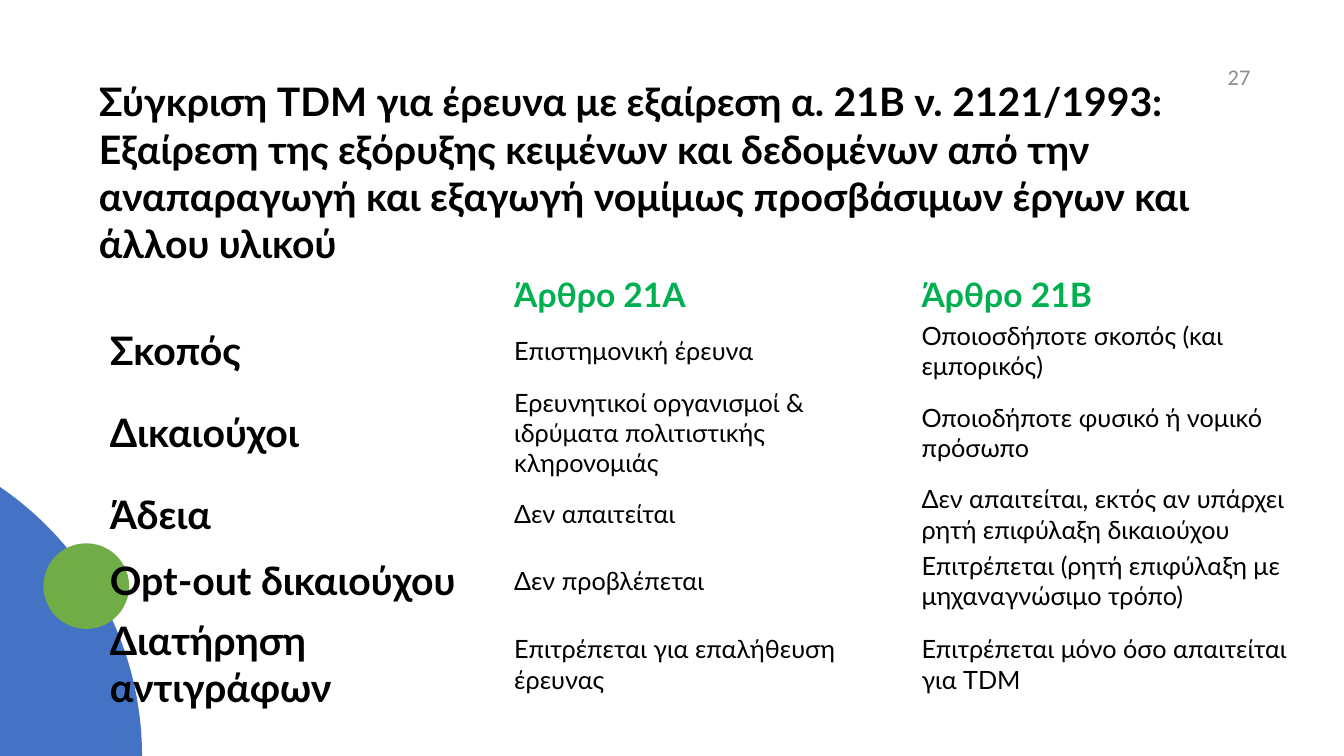
import math
from dataclasses import dataclass

from pptx import Presentation
from pptx import util as u
from pptx.dml.color import RGBColor
from pptx.enum import shapes, text

WIDTH, HEIGHT = u.Inches(13.33), u.Inches(7.5)
BLACK, GREEN, GREY = "000000", "00B050", "8C8C8C"
NO_STYLE = "{2D5ABB26-0587-4C30-8999-92F81FD0307C}"


@dataclass(frozen=True)
class Box:
    """Left, top, width and height as percentages of the slide."""
    left: float
    top: float
    width: float
    height: float

    def emu(self) -> tuple:
        return x(self.left), y(self.top), x(self.width), y(self.height)


@dataclass(frozen=True)
class Style:
    size: int
    color: str = BLACK
    bold: bool = False
    font: str = "Lato"


@dataclass(frozen=True)
class Row:
    height: float
    label: str
    article_a: str
    article_b: str


def x(percent: float) -> int:
    return round(WIDTH * percent / 100)


def y(percent: float) -> int:
    return round(HEIGHT * percent / 100)


def rgb(value: str) -> RGBColor:
    return RGBColor.from_string(value)


def write(tf, words: str, style: Style, align=text.PP_ALIGN.LEFT) -> None:
    p = tf.paragraphs[0]
    p.alignment = align
    p.line_spacing = 1.0
    r = p.add_run()
    r.text = words
    r.font.name, r.font.size = style.font, u.Pt(style.size)
    r.font.bold, r.font.color.rgb = style.bold, rgb(style.color)


def paint(sp, color: str) -> None:
    sp.shadow.inherit = False
    sp.fill.solid()
    sp.fill.fore_color.rgb = rgb(color)
    sp.line.fill.background()


TITLE = Style(28, bold=True)
HEADING = Style(24, GREEN, True)
LABEL = Style(28, bold=True)
BODY = Style(18)
NUMBER = Style(16, GREY, font="Calibri")

COLUMNS = (30.08, 30.31, 30.31)
ROWS = (
    Row(4.67, "", "Άρθρο 21Α", "Άρθρο 21Β"),
    Row(8.13, "Σκοπός", "Επιστημονική έρευνα", "Οποιοσδήποτε σκοπός (και εμπορικός)"),
    Row(11.6, "Δικαιούχοι", "Ερευνητικοί οργανισμοί & ιδρύματα πολιτιστικής κληρονομιάς",
        "Οποιοδήποτε φυσικό ή νομικό πρόσωπο"),
    Row(8.13, "Άδεια", "Δεν απαιτείται",
        "Δεν απαιτείται, εκτός αν υπάρχει ρητή επιφύλαξη δικαιούχου"),
    Row(8.13, "Opt-out δικαιούχου", "Δεν προβλέπεται",
        "Επιτρέπεται (ρητή επιφύλαξη με μηχαναγνώσιμο τρόπο)"),
    Row(8.13, "Διατήρηση αντιγράφων", "Επιτρέπεται για επαλήθευση έρευνας",
        "Επιτρέπεται μόνο όσο απαιτείται για TDM"),
)


def add_corner_circle(s) -> None:
    """Part of a circle centred on the bottom edge, left of the slide."""
    center, radius = x(-13.68), x(24.25)
    end = math.acos(-center / radius)
    steps = 60
    arc = [(round(center + radius * math.cos(end * i / steps)),
            round(HEIGHT - radius * math.sin(end * i / steps)))
           for i in range(steps + 1)]
    outline = s.shapes.build_freeform(0, HEIGHT)
    outline.add_line_segments(arc, close=True)
    paint(outline.convert_to_shape(), "4472C4")


def add_comparison(s) -> None:
    box = Box(7.73, 35.87, sum(COLUMNS), sum(row.height for row in ROWS))
    table = s.shapes.add_table(len(ROWS), len(COLUMNS), *box.emu()).table
    table.first_row = table.horz_banding = False
    table._tbl.tblPr[0].text = NO_STYLE
    for column, width in zip(table.columns, COLUMNS):
        column.width = x(width)
    for i, row in enumerate(ROWS):
        table.rows[i].height = y(row.height)
        for j, words in enumerate((row.label, row.article_a, row.article_b)):
            cell = table.cell(i, j)
            cell.fill.background()
            cell.vertical_anchor = text.MSO_ANCHOR.MIDDLE
            cell.margin_left = cell.margin_right = u.Inches(0.06)
            cell.margin_top = cell.margin_bottom = u.Inches(0.03)
            if words:
                style = HEADING if i == 0 else LABEL if j == 0 else BODY
                write(cell.text_frame, words, style)


def main() -> None:
    prs = Presentation()
    prs.slide_width, prs.slide_height = WIDTH, HEIGHT
    s = prs.slides.add_slide(prs.slide_layouts[5])

    # Corner decoration
    add_corner_circle(s)
    dot = Box(3.23, 71.87, 6.38, 11.33)
    paint(s.shapes.add_shape(shapes.MSO_SHAPE.OVAL, *dot.emu()), "70AD47")

    # Title
    title = s.shapes.title
    title.left, title.top, title.width, title.height = Box(6.6, 15.47, 89.95, 14.53).emu()
    tf = title.text_frame
    tf.word_wrap, tf.auto_size = True, text.MSO_AUTO_SIZE.NONE
    tf.vertical_anchor = text.MSO_ANCHOR.MIDDLE
    tf.margin_left = tf.margin_right = u.Inches(0.1)
    tf.margin_top = tf.margin_bottom = 0
    write(tf, "Σύγκριση TDM για έρευνα με εξαίρεση α. 21Β ν. 2121/1993: "
              "Εξαίρεση της εξόρυξης κειμένων και δεδομένων από την αναπαραγωγή "
              "και εξαγωγή νομίμως προσβάσιμων έργων και άλλου υλικού", TITLE)

    # Comparison of the two articles
    add_comparison(s)

    # Slide number
    tf = s.shapes.add_textbox(*Box(85.67, 6.67, 8.1, 6.93).emu()).text_frame
    tf.word_wrap, tf.vertical_anchor = True, text.MSO_ANCHOR.MIDDLE
    write(tf, "27", NUMBER, text.PP_ALIGN.RIGHT)

    prs.save("out.pptx")


if __name__ == "__main__":
    main()
